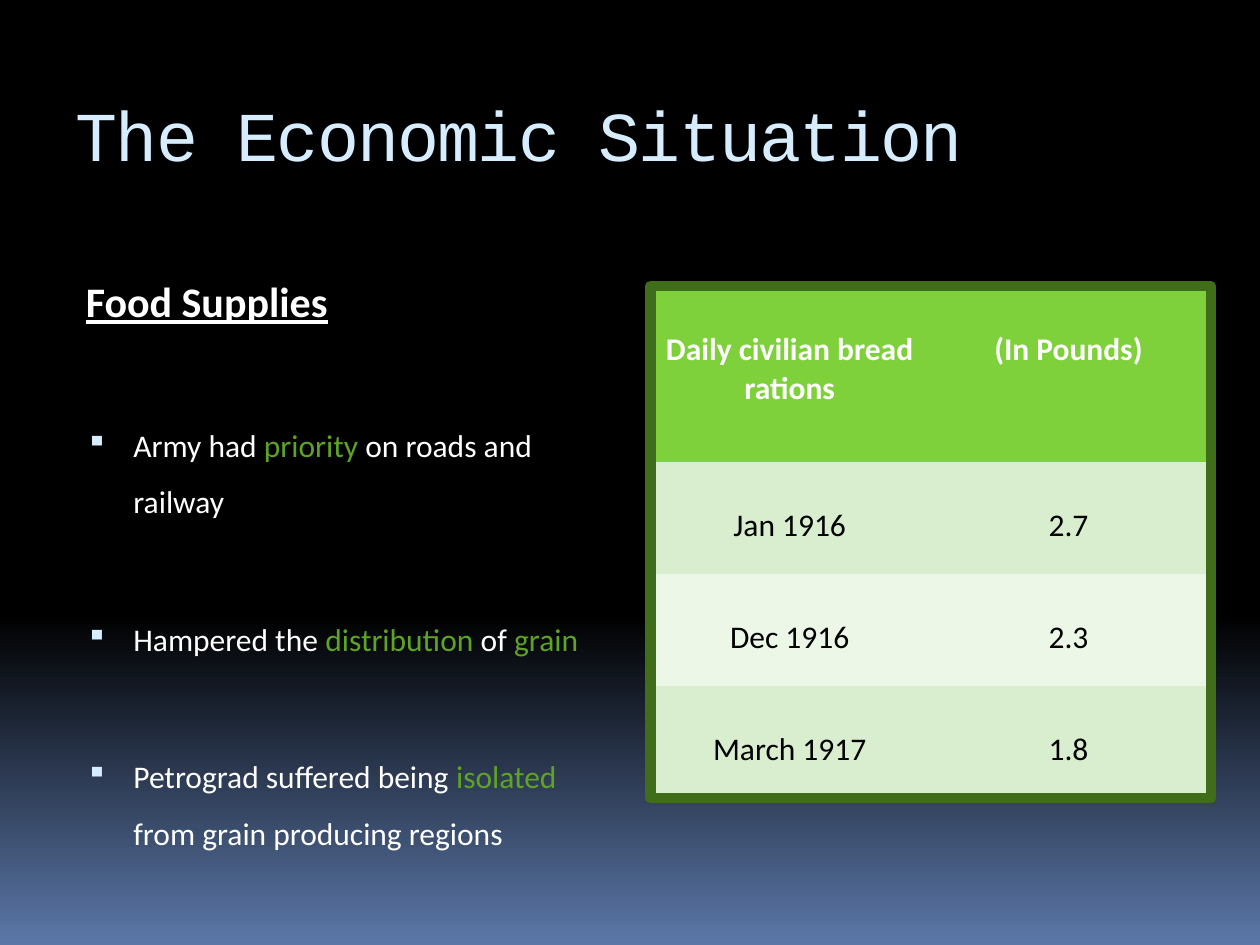
from lxml.etree import SubElement
from pptx import Presentation
from pptx.dml.color import RGBColor
from pptx.enum.shapes import MSO_SHAPE
from pptx.enum.text import MSO_ANCHOR, PP_ALIGN
from pptx.oxml.ns import qn
from pptx.util import Cm, Pt

HUE = {"black": "000000", "blue": "5B77A8", "pale": "D6ECFF", "white": "FFFFFF",
       "leaf": "5FA326", "head": "7FD13B", "odd": "D8EECE", "even": "ECF7E8",
       "frame": "3F6D19"}


def tint(name):
    return RGBColor.from_string(HUE[name])


def style(font, color, **form):
    for key, val in {"name": "Calibri", "size": Pt(18), "bold": False, **form}.items():
        setattr(font, key, val)
    font.color.rgb = tint(color)


deck = Presentation()
deck.slide_width, deck.slide_height = Cm(25.4), Cm(19.05)
slide = deck.slides.add_slide(deck.slide_layouts[5])

back = slide.background.fill
back.gradient()
back.gradient_angle = 270
for stop, (pos, color) in zip(back.gradient_stops, [(0.65, "black"), (1, "blue")]):
    stop.position = pos
    stop.color.rgb = tint(color)

title = slide.shapes.title
place = {"left": Cm(1.27), "top": Cm(1.42), "width": Cm(22.86), "height": Cm(2.54)}
for key, val in place.items():
    setattr(title, key, val)
title.text_frame.vertical_anchor = MSO_ANCHOR.MIDDLE
para = title.text_frame.paragraphs[0]
para.alignment = PP_ALIGN.LEFT
run = para.add_run()
run.text = "The Economic Situation"
style(run.font, "pale", name="Courier New", size=Pt(40))
run.font._element.set("spc", "-100")

body = slide.shapes.add_textbox(Cm(1.3), Cm(4.93), Cm(11.23), Cm(12.57)).text_frame
body.word_wrap = True
para = body.paragraphs[0]
para.line_spacing = 1.5
para._p.get_or_add_pPr().set("marL", str(Cm(0.18)))
run = para.add_run()
run.text = "Food Supplies"
style(run.font, "white", size=Pt(24), bold=True, underline=True)

points = [
    [("Army had ", "white"), ("priority", "leaf"), (" on roads and railway", "white")],
    [("Hampered the ", "white"), ("distribution", "leaf"), (" of ", "white"),
     ("grain", "leaf")],
    [("Petrograd suffered being ", "white"), ("isolated", "leaf"),
     (" from grain producing regions", "white")],
]
for point in points:
    para = body.add_paragraph()
    para.line_spacing = 1.5
    para.space_before = Pt(46)
    props = para._p.get_or_add_pPr()
    props.set("marL", str(Cm(1.14)))
    props.set("indent", str(Cm(-0.96)))
    SubElement(SubElement(props, qn("a:buClr")), qn("a:srgbClr"), val=HUE["pale"])
    SubElement(props, qn("a:buSzPct"), val="95000")
    SubElement(props, qn("a:buChar"), char="▪")
    for text, color in point:
        run = para.add_run()
        run.text = text
        style(run.font, color)

rows = [("Daily civilian bread rations", "(In Pounds)"), ("Jan 1916", "2.7"),
        ("Dec 1916", "2.3"), ("March 1917", "1.8")]
left, top, wide, high = Cm(13.11), Cm(5.77), Cm(11.24), Cm(10.32)
table = slide.shapes.add_table(4, 2, left, top, wide, high).table
table.first_row = table.horz_banding = False
table._tbl.tblPr[0].text = "{2D5ABB26-0587-4C30-8999-92F81FD0307C}"
for i, row in enumerate(rows):
    table.rows[i].height = Cm(2.26 if i else 3.54)
    for j, text in enumerate(row):
        cell = table.cell(i, j)
        cell.margin_top = Cm(0.9)
        cell.fill.solid()
        cell.fill.fore_color.rgb = tint("head" if i == 0 else "odd" if i % 2 else "even")
        para = cell.text_frame.paragraphs[0]
        para.alignment = PP_ALIGN.CENTER
        run = para.add_run()
        run.text = text
        style(run.font, "black" if i else "white", bold=i == 0)

frame = slide.shapes.add_shape(MSO_SHAPE.RECTANGLE, left, top, Cm(11.3), high)
frame.shadow.inherit = False
frame.fill.background()
frame.line.color.rgb = tint("frame")
frame.line.width = Pt(6)
SubElement(frame.line._ln, qn("a:round"))

deck.save("out.pptx")
